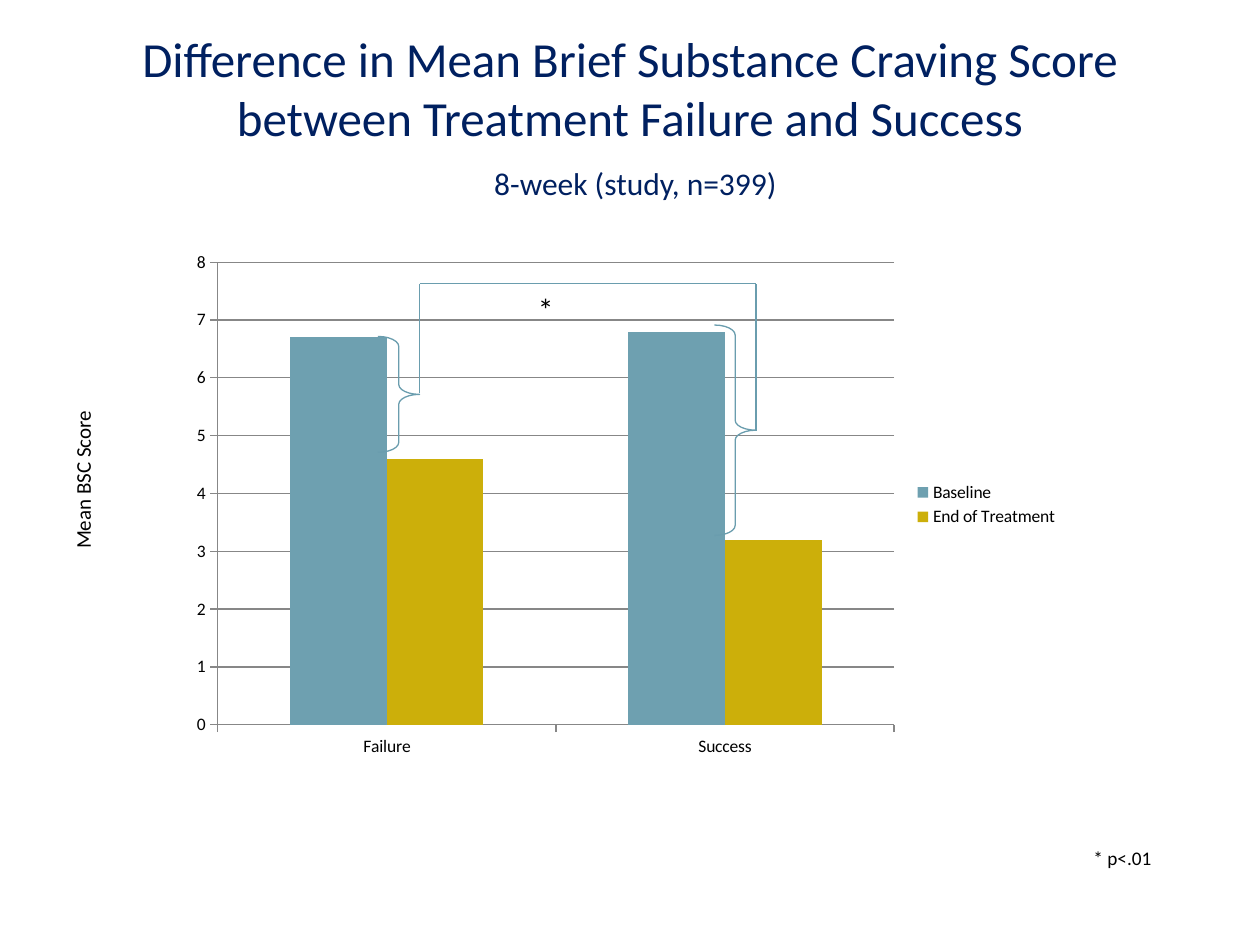
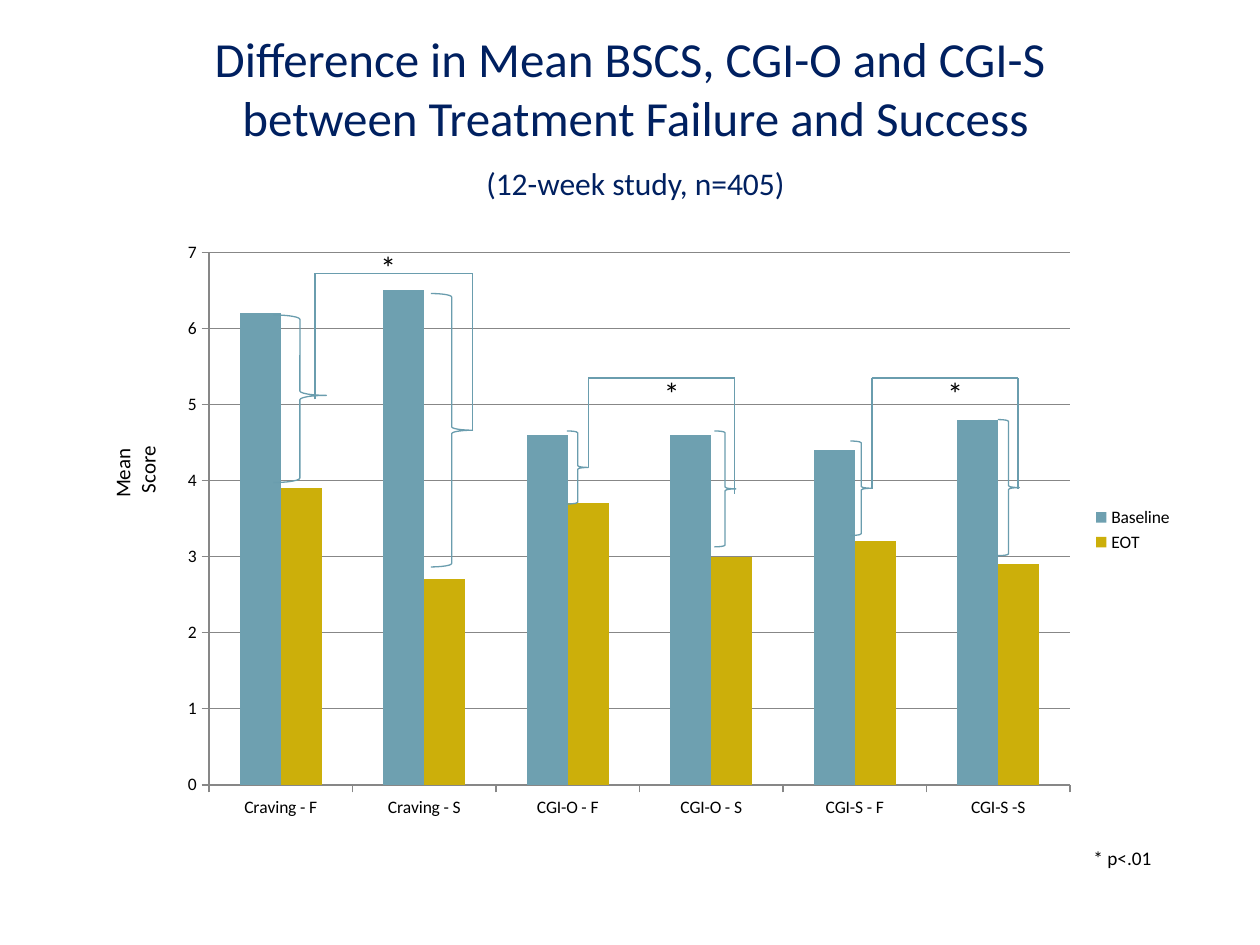
import pptx
import pptx.chart.data
import pptx.dml.color
import pptx.enum.chart
import pptx.enum.shapes
import pptx.enum.text
import pptx.oxml.ns
import pptx.util
from lxml import etree

Inches = pptx.util.Inches
Pt = pptx.util.Pt
FONT = "Calibri"
COLORS = {
    "title": "002060",
    "text": "000000",
    "baseline": "6EA0B0",
    "end": "CCAF0A",
    "bracket": "6A9DAE",
    "axis": "878787",
}


def rgb(name):
    return pptx.dml.color.RGBColor.from_string(COLORS[name])


def add_text(frame, paragraphs, color="text", align=None, space=None):
    """Fill a frame; each paragraph is a list of (text, point size) spans, "\\v" breaks a line."""
    for index, spans in enumerate(paragraphs):
        para = frame.paragraphs[0] if index == 0 else frame.add_paragraph()
        para.alignment = align
        for text, size in spans:
            for part_index, part in enumerate(text.split("\v")):
                if part_index:
                    para.add_line_break()
                span = para.add_run()
                span.text = part
                span.font.name = FONT
                span.font.size = Pt(size)
                span.font.color.rgb = rgb(color)


class DeckBuilder:
    def __init__(self):
        self.deck = pptx.Presentation()
        self.deck.slide_width = Inches(10)
        self.deck.slide_height = Inches(7.5)
        self.page = None

    def start_page(self, title, study):
        """Add a slide with its title, study line and significance footnote."""
        self.page = self.deck.slides.add_slide(self.deck.slide_layouts[6])
        box = self.page.shapes.add_textbox(*map(Inches, (0.5, 0.3, 9, 1.25)))
        box.text_frame.word_wrap = True
        box.text_frame.vertical_anchor = pptx.enum.text.MSO_ANCHOR.MIDDLE
        add_text(box.text_frame, [[(title + "\v ", 28), (study, 18)]],
                 color="title", align=pptx.enum.text.PP_ALIGN.CENTER)
        self.label(8.58, 6.67, 0.67, 0.29, ["* p<.01"], size=11)

    def label(self, left, top, width, height, lines, size=12, rotation=0):
        box = self.page.shapes.add_textbox(*map(Inches, (left, top, width, height)))
        box.rotation = rotation
        box.text_frame.word_wrap = False
        box.text_frame.auto_size = pptx.enum.text.MSO_AUTO_SIZE.SHAPE_TO_FIT_TEXT
        add_text(box.text_frame, [[(line, size)] for line in lines])

    def column_chart(self, left, top, width, height, categories, series, maximum):
        data = pptx.chart.data.CategoryChartData()
        data.categories = categories
        for name, values in series.items():
            data.add_series(name, values)
        chart = self.page.shapes.add_chart(
            pptx.enum.chart.XL_CHART_TYPE.COLUMN_CLUSTERED,
            *map(Inches, (left, top, width, height)), data).chart
        chart.has_title = False
        chart.font.name = FONT
        chart.font.size = Pt(10)
        chart.font.color.rgb = rgb("text")
        chart.has_legend = True
        chart.legend.position = pptx.enum.chart.XL_LEGEND_POSITION.RIGHT
        chart.legend.include_in_layout = False
        plot = chart.plots[0]
        plot.gap_width = 150
        plot.vary_by_categories = False
        for bars, color in zip(plot.series, ("baseline", "end")):
            bars.format.fill.solid()
            bars.format.fill.fore_color.rgb = rgb(color)
        scale = chart.value_axis
        scale.minimum_scale, scale.maximum_scale, scale.major_unit = 0, maximum, 1
        scale.has_major_gridlines = True
        for part in (scale, chart.category_axis, scale.major_gridlines):
            self.style_line(part.format.line, "axis")
        for axis in (scale, chart.category_axis):
            axis.major_tick_mark = pptx.enum.chart.XL_TICK_MARK.OUTSIDE

    def style_line(self, line, color):
        line.color.rgb = rgb(color)
        line.width = Pt(0.75)

    def brace(self, left, top, width, height, curve=0.083, tip=0.5):
        shape = self.page.shapes.add_shape(
            pptx.enum.shapes.MSO_SHAPE.RIGHT_BRACE,
            *map(Inches, (left, top, width, height)))
        shape.shadow.inherit = False
        shape.fill.background()
        self.style_line(shape.line, "bracket")
        shape.adjustments[0] = curve
        shape.adjustments[1] = tip

    def line(self, start, end):
        connector = self.page.shapes.add_connector(
            pptx.enum.shapes.MSO_CONNECTOR.STRAIGHT, *map(Inches, (*start, *end)))
        self.style_line(connector.line, "bracket")
        etree.SubElement(connector._element.spPr, pptx.oxml.ns.qn("a:effectLst"))

    def comparison(self, star, braces, stems, top):
        """Join two braces by stems that rise to a bar at top, marked with a star."""
        self.label(*star, 0.33, 0.4, ["*"], size=18)
        for brace in braces:
            self.brace(*brace)
        for x, y in stems:
            self.line((x, y), (x, top))
        self.line(*((x, top) for x, _ in stems))


def main():
    builder = DeckBuilder()

    builder.start_page("Difference in Mean Brief Substance Craving Score "
                       "between Treatment Failure and Success",
                       "8-week (study, n=399)")
    builder.label(0, 3.65, 1.31, 0.3, ["Mean BSC Score"], rotation=270)
    builder.column_chart(1.42, 1.92, 7.08, 4.17, ["Failure", "Success"],
                         {"Baseline": (6.7, 6.8), "End of Treatment": (4.6, 3.2)},
                         maximum=8)
    builder.comparison(star=(4.17, 2.25), top=2.25,
                       braces=[(3, 2.67, 0.33, 0.92, 0.24),
                               (5.67, 2.58, 0.33, 1.67, 0.24)],
                       stems=[(3.33, 3.12), (6, 3.42)])

    builder.start_page("Difference in Mean BSCS, CGI-O and CGI-S\v"
                       " between Treatment Failure and Success",
                       "(12-week study, n=405)")
    builder.label(0.75, 3.48, 0.64, 0.5, ["Mean", " Score"], rotation=270)
    builder.column_chart(1.33, 1.83, 8.08, 4.75,
                         ["Craving - F", "Craving - S", "CGI-O - F",
                          "CGI-O - S", "CGI-S - F", "CGI-S -S"],
                         {"Baseline": (6.2, 6.5, 4.6, 4.6, 4.4, 4.8),
                          "EOT": (3.9, 2.7, 3.7, 3, 3.2, 2.9)},
                         maximum=7)
    builder.comparison(star=(2.92, 1.92), top=2.17,
                       braces=[(3.42, 2.33, 0.33, 2.17),
                               (2.17, 2.5, 0.42, 1.33, 0.083, 0.48)],
                       stems=[(2.5, 3.17), (3.75, 3.42)])
    builder.comparison(star=(5.17, 2.92), top=3,
                       braces=[(5.67, 3.42, 0.17, 0.92), (4.5, 3.42, 0.17, 0.58)],
                       stems=[(4.67, 3.71), (5.83, 3.92)])
    builder.comparison(star=(7.42, 2.92), top=3,
                       braces=[(7.92, 3.33, 0.17, 1.08), (6.75, 3.5, 0.17, 0.75)],
                       stems=[(6.92, 3.88), (8.08, 3.88)])

    builder.deck.save("out.pptx")


if __name__ == "__main__":
    main()
